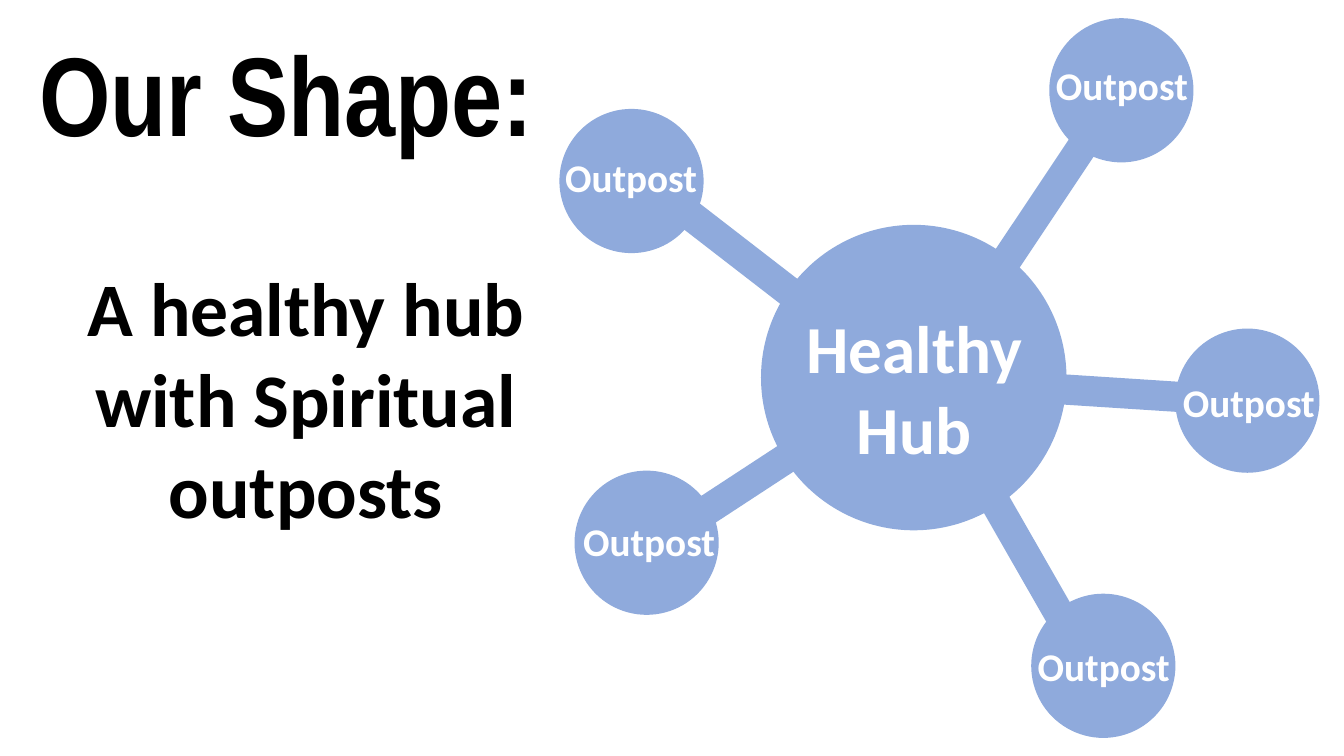
from dataclasses import dataclass

from pptx import Presentation
from pptx import util as u
from pptx.dml.color import RGBColor
from pptx.enum import shapes, text

BLUE = RGBColor(0x8F, 0xAA, 0xDC)
BLACK = RGBColor(0, 0, 0)
WHITE = RGBColor(0xFF, 0xFF, 0xFF)

# Sizes in points
HUB_SIZE = 218.2
OUTPOST_SIZE = 103
SPOKE_W, SPOKE_H = 21.6, 148.3
LABEL_W, LABEL_H = 177.1, 41


@dataclass(frozen=True)
class Outpost:
    """Top-left corners of the circle, its spoke and its label."""
    circle: tuple[float, float]
    spoke: tuple[float, float]
    angle: float
    label: tuple[float, float]


@dataclass(frozen=True)
class TextBox:
    content: str
    left: float
    top: float
    width: float
    height: float
    size: float
    color: RGBColor
    font: str = "Calibri"
    align: text.PP_ALIGN = text.PP_ALIGN.CENTER


OUTPOSTS = [
    Outpost((399.6, 77.8), (512.6, 103), 307.7, (362.2, 105.8)),
    Outpost((736.6, 424.1), (721.4, 321.8), 330.2, (699.8, 455)),
    Outpost((410.4, 336.2), (540.7, 259.9), 56.8, (375.1, 365.8)),
    Outpost((839.5, 234.7), (811.4, 208.1), 93.7, (803.5, 266.4)),
    Outpost((749.5, 13), (742.3, 60.5), 33.7, (712.8, 40.3)),
]

TEXTS = [
    TextBox("A healthy hub with Spiritual outposts",
            0.7, 182.9, 435.6, 269.3, 54, BLACK),
    TextBox("Healthy Hub", 564.5, 215.3, 177.1, 123.8, 48, WHITE),
    *(TextBox("Outpost", *o.label, LABEL_W, LABEL_H, 28, WHITE)
      for o in OUTPOSTS),
    TextBox("Our Shape:", 20.9, 13.7, 492.5, 104.4, 80, BLACK,
            "Arial Narrow", text.PP_ALIGN.LEFT),
]


def add_blue(container, kind: shapes.MSO_SHAPE, left: float, top: float,
             width: float, height: float, angle: float = 0) -> None:
    sp = container.add_shape(kind, u.Pt(left), u.Pt(top),
                             u.Pt(width), u.Pt(height))
    sp.rotation = angle
    sp.shadow.inherit = False
    sp.fill.solid()
    sp.fill.fore_color.rgb = BLUE
    sp.line.fill.background()


def add_text(s, box: TextBox) -> None:
    sp = s.shapes.add_textbox(u.Pt(box.left), u.Pt(box.top),
                              u.Pt(box.width), u.Pt(box.height))
    tf = sp.text_frame
    tf.word_wrap = True
    p = tf.paragraphs[0]
    p.text = box.content
    p.alignment = box.align
    p.font.name = box.font
    p.font.size = u.Pt(box.size)
    p.font.bold = True
    p.font.color.rgb = box.color


def main() -> None:
    prs = Presentation()
    prs.slide_width, prs.slide_height = u.Pt(960), u.Pt(540)
    s = prs.slides.add_slide(prs.slide_layouts[6])

    # Hub, outposts and spokes as one group
    wheel = s.shapes.add_group_shape().shapes
    oval, rect = shapes.MSO_SHAPE.OVAL, shapes.MSO_SHAPE.RECTANGLE
    add_blue(wheel, oval, 543.6, 160.6, HUB_SIZE, HUB_SIZE)
    for o in OUTPOSTS:
        add_blue(wheel, oval, *o.circle, OUTPOST_SIZE, OUTPOST_SIZE)
        add_blue(wheel, rect, *o.spoke, SPOKE_W, SPOKE_H, o.angle)

    # Title, statement and labels
    for box in TEXTS:
        add_text(s, box)

    prs.save("out.pptx")


if __name__ == "__main__":
    main()
